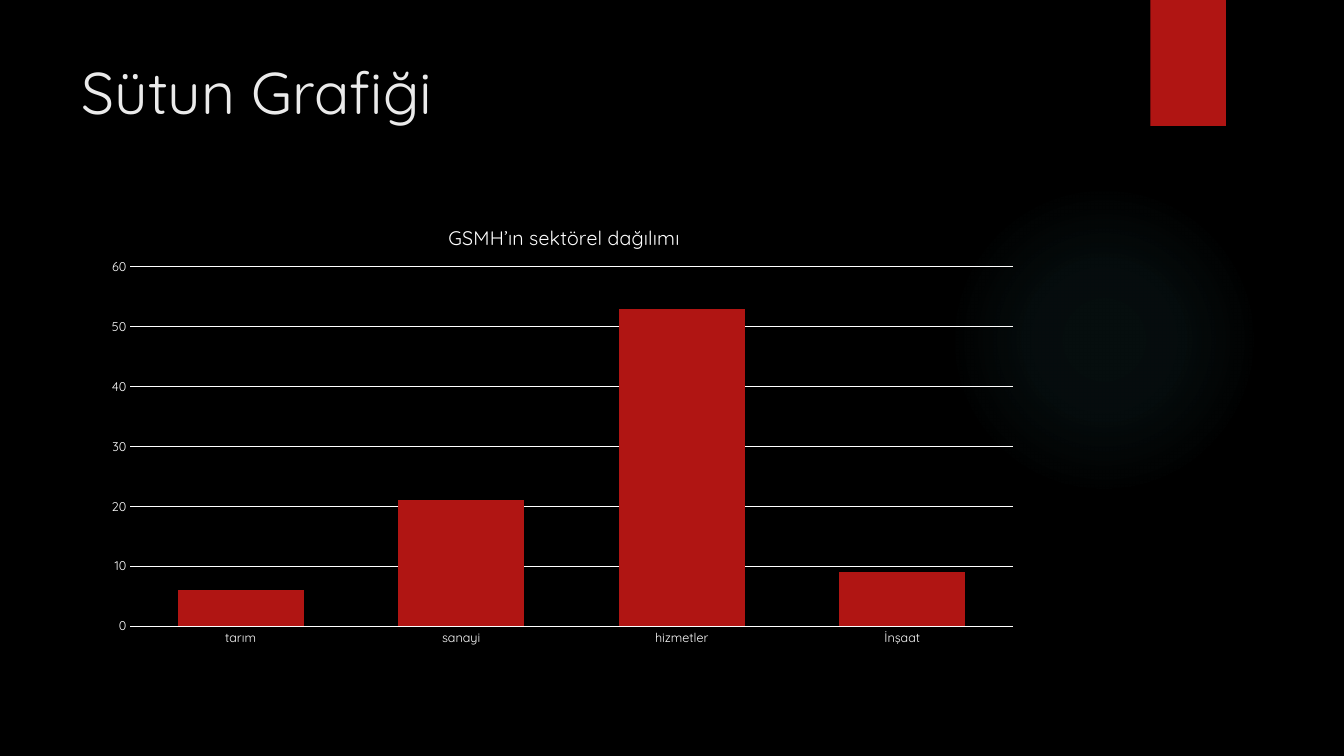
from lxml import etree
from pptx import Presentation
from pptx import util as u
from pptx.chart.data import CategoryChartData
from pptx.dml.color import RGBColor
from pptx.enum import chart as charts, shapes, text
from pptx.oxml import parse_xml
from pptx.oxml.ns import nsdecls, qn

BLACK, WHITE, RED, TEAL, PALE = "000000", "FFFFFF", "B01513", "50B9C1", "EBEBEB"


def color(hex_string):
    return RGBColor.from_string(hex_string)


class SlideBuilder:
    font_name = "Quicksand"

    def __init__(self, slide):
        self.slide = slide

    def background(self, fill):
        self.slide.background.fill.solid()
        self.slide.background.fill.fore_color.rgb = color(fill)

    def style_font(self, font, size, hex_string):
        font.name = self.font_name
        font.size = u.Pt(size)
        font.bold = False
        font.color.rgb = color(hex_string)

    def shape(self, kind, left, top, width, height, fill):
        box = map(u.Inches, (left, top, width, height))
        shape = self.slide.shapes.add_shape(kind, *box)
        shape.shadow.inherit = False
        shape.fill.solid()
        shape.fill.fore_color.rgb = color(fill)
        shape.line.fill.background()
        return shape

    def glow(self, left, top, size, hex_string, stops):
        """Circle with a radial gradient; stops are (position %, opacity %)."""
        shape = self.shape(shapes.MSO_SHAPE.OVAL, left, top, size, size, hex_string)
        stop_xml = "".join(
            f'<a:gs pos="{position * 1000}"><a:srgbClr val="{hex_string}">'
            f'<a:alpha val="{opacity * 1000}"/></a:srgbClr></a:gs>'
            for position, opacity in stops)
        gradient = parse_xml(
            f'<a:gradFill {nsdecls("a")} rotWithShape="1"><a:gsLst>{stop_xml}</a:gsLst>'
            '<a:path path="circle"><a:fillToRect l="50000" t="50000" r="50000" b="50000"/>'
            '</a:path></a:gradFill>')
        properties = shape._element.spPr
        properties.replace(properties.find(qn("a:solidFill")), gradient)

    def ribbon(self, left, top, width, height, fill):
        """Rectangle with a soft shadow below it."""
        shape = self.shape(shapes.MSO_SHAPE.RECTANGLE, left, top, width, height, fill)
        effects = shape._element.spPr.find(qn("a:effectLst"))
        shadow = etree.SubElement(effects, qn("a:outerShdw"), blurRad=str(u.Pt(3)),
                                  dist=str(u.Pt(2)), dir="5400000", rotWithShape="0")
        shade = etree.SubElement(shadow, qn("a:srgbClr"), val=BLACK)
        etree.SubElement(shade, qn("a:alpha"), val="45000")

    def text_box(self, left, top, width, height, wording, size, hex_string):
        box = map(u.Inches, (left, top, width, height))
        frame = self.slide.shapes.add_textbox(*box).text_frame
        frame.word_wrap = True
        frame.vertical_anchor = text.MSO_ANCHOR.TOP
        frame.text = wording
        self.style_font(frame.paragraphs[0].runs[0].font, size, hex_string)

    def place(self, element, before, **layout):
        """Set a manual layout, in fractions of the chart, on a chart element."""
        for old in element.findall(qn("c:layout")):
            element.remove(old)
        entries = "".join(f'<c:{key} val="{value}"/>' for key, value in layout.items())
        element.find(qn(before)).addprevious(parse_xml(
            f'<c:layout {nsdecls("c")}><c:manualLayout>{entries}</c:manualLayout></c:layout>'))

    def style_axis(self, axis):
        axis.major_tick_mark = axis.minor_tick_mark = charts.XL_TICK_MARK.NONE
        self.style_font(axis.tick_labels.font, 9, WHITE)

    def style_line(self, line):
        line.color.rgb = color(WHITE)
        line.width = u.Pt(0.75)

    def column_chart(self, left, top, width, height, title, categories, values, fill):
        data = CategoryChartData()
        data.categories = categories
        data.add_series("Series 1", values)
        box = map(u.Inches, (left, top, width, height))
        chart = self.slide.shapes.add_chart(
            charts.XL_CHART_TYPE.COLUMN_CLUSTERED, *box, data).chart
        self.style_font(chart.font, 10, WHITE)
        chart.has_legend = False
        chart.has_title = True
        chart.chart_title.text_frame.text = title
        title_run = chart.chart_title.text_frame.paragraphs[0].runs[0]
        self.style_font(title_run.font, 14, WHITE)

        category_axis, value_axis = chart.category_axis, chart.value_axis
        self.style_axis(category_axis)
        self.style_line(category_axis.format.line)
        self.style_axis(value_axis)
        value_axis.format.line.fill.background()
        value_axis.has_major_gridlines = True
        self.style_line(value_axis.major_gridlines.format.line)
        value_axis.minimum_scale, value_axis.maximum_scale = 0, 60
        value_axis.major_unit = 10

        plot = chart.plots[0]
        plot.vary_by_categories = False
        plot.gap_width, plot.overlap = 75, -25
        plot.series[0].format.fill.solid()
        plot.series[0].format.fill.fore_color.rgb = color(fill)

        self.place(chart.chart_title._element, "c:overlay",
                   xMode="edge", yMode="edge", x=0.375, y=0.04)
        self.place(chart._chartSpace.chart.plotArea, "c:barChart", layoutTarget="inner",
                   xMode="edge", yMode="edge", x=0.04, y=0.144, w=0.94, h=0.792)


def main():
    presentation = Presentation()
    presentation.slide_width = u.Inches(13.33)
    presentation.slide_height = u.Inches(7.5)
    builder = SlideBuilder(presentation.slides.add_slide(presentation.slide_layouts[6]))
    builder.background(BLACK)
    builder.glow(9.41, 1.83, 3.08, TEAL, [(0, 7), (36, 6), (69, 0)])
    builder.ribbon(11.41, 0, 0.75, 1.25, RED)
    builder.text_box(0.71, 0.5, 10.29, 1.53, "Sütun Grafiği", 42, PALE)
    builder.column_chart(0.92, 2, 9.31, 4.5, "GSMH’ın sektörel dağılımı",
                         ["tarım", "sanayi", "hizmetler", "İnşaat"], [6, 21, 53, 9], RED)
    presentation.save("out.pptx")


if __name__ == "__main__":
    main()
